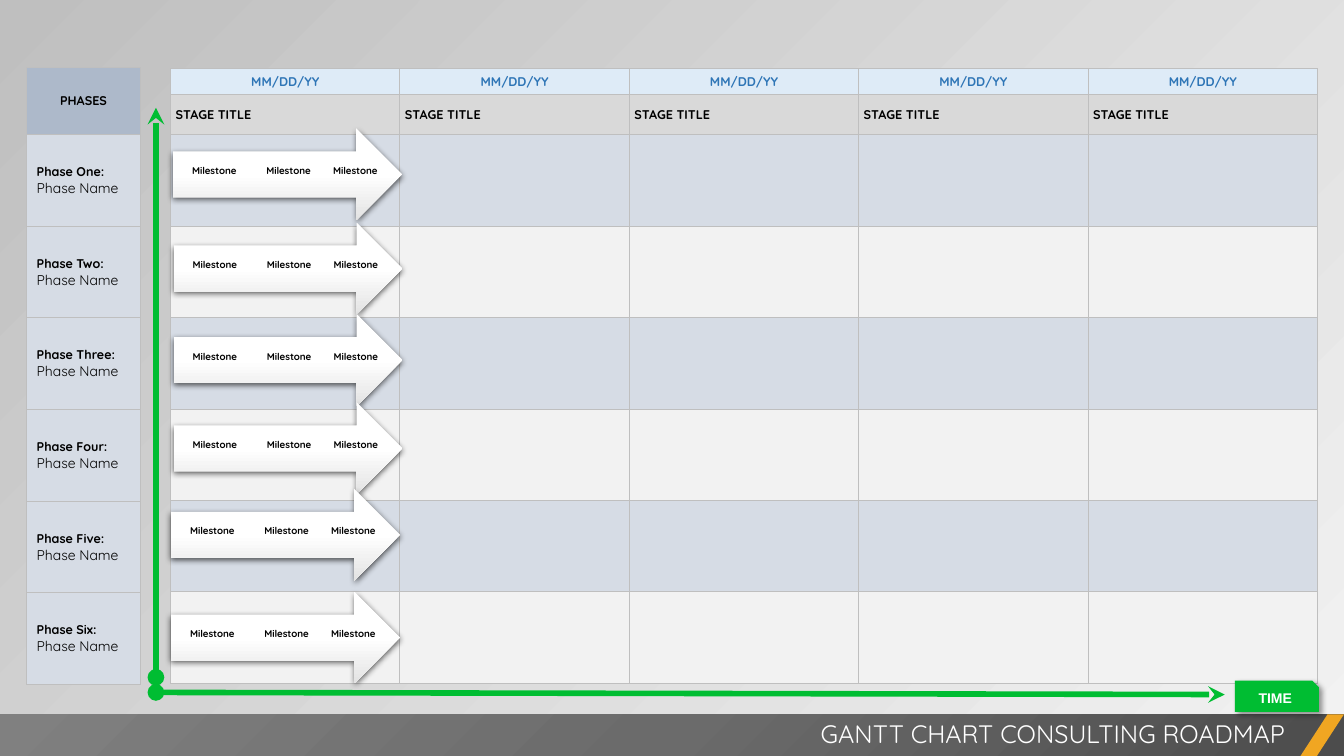
import pptx
import pptx.dml.color
import pptx.enum.shapes
import pptx.enum.text
import pptx.oxml
import pptx.oxml.ns
import pptx.util

Pt = pptx.util.Pt
Shape = pptx.enum.shapes.MSO_SHAPE
Align = pptx.enum.text.PP_ALIGN
MIDDLE = pptx.enum.text.MSO_ANCHOR.MIDDLE

GREEN = "00BD32"
STAGE_COUNT = 5
PHASES = ["One", "Two", "Three", "Four", "Five", "Six"]
ARROW_SPOTS = [(123.6, 91.7), (124, 159), (124, 224.4), (124, 287.4), (122.2, 349.2), (122.2, 422.6)]
MILESTONES = [(4.3, 50.4), (65.2, 34.6), (112.9, 34.6)]
HEADER_FONT = {"name": "Quicksand", "size": Pt(9), "bold": True}
NAME_FONT = {"name": "Quicksand", "size": Pt(10), "bold": False}
MILESTONE_FONT = {"name": "Quicksand", "size": Pt(7), "bold": True}
TIME_FONT = {"name": "Arial", "size": Pt(10), "bold": True}
TITLE_FONT = {"name": "Quicksand", "size": Pt(18), "bold": False}


def apply_format(target, values):
    """Set every attribute in values on target."""
    for name, value in values.items():
        setattr(target, name, value)


def paint(fill, colour):
    """Make a fill solid in a hex colour."""
    fill.solid()
    fill.fore_color.rgb = pptx.dml.color.RGBColor.from_string(colour)


def drawing_xml(tag, content="", attributes=""):
    """Build one DrawingML element."""
    namespace = pptx.oxml.ns.nsdecls("a")
    return pptx.oxml.parse_xml(f"<a:{tag} {namespace} {attributes}>{content}</a:{tag}>")


def paint_gradient(fill, element, stops, direction):
    """Give a fill gradient stops (position, hex, opacity) and a direction."""
    fill.gradient()
    marks = "".join(
        f'<a:gs pos="{position * 1000}"><a:srgbClr val="{colour}">'
        f'<a:alpha val="{opacity * 1000}"/></a:srgbClr></a:gs>'
        for position, colour, opacity in stops)
    gradient = element.xpath(".//a:gradFill")[0]
    gradient.getparent().replace(gradient, drawing_xml("gradFill", f"<a:gsLst>{marks}</a:gsLst>{direction}"))


def add_shadow(shape, opacity, blur, distance, angle):
    """Add a black outer shadow to a shape."""
    effects = shape.element.spPr.find(pptx.oxml.ns.qn("a:effectLst"))
    effects.append(drawing_xml(
        "outerShdw",
        f'<a:srgbClr val="000000"><a:alpha val="{opacity * 1000}"/></a:srgbClr>',
        f'blurRad="{Pt(blur)}" dist="{Pt(distance)}" dir="{angle * 60000}" algn="t" rotWithShape="0"'))


def write(frame, runs, alignment, para_format=None):
    """Write runs of (text, font, colour) in the first paragraph."""
    para = frame.paragraphs[0]
    apply_format(para, {"alignment": alignment, **(para_format or {})})
    for text, font, colour in runs:
        span = para.add_run()
        span.text = text
        apply_format(span.font, font)
        paint(span.font.fill, colour)


def add_plain_shape(shapes, kind, place, colour=None):
    """Add a preset shape with no outline or theme shadow."""
    shape = shapes.add_shape(kind, *map(Pt, place))
    shape.shadow.inherit = False
    shape.line.fill.background()
    if colour:
        paint(shape.fill, colour)
    return shape


def add_grid(slide, place, widths, heights):
    """Add a plain table with given column widths and row heights."""
    frame = slide.shapes.add_table(len(heights), len(widths), *map(Pt, place))
    table = frame.table
    apply_format(table, {"first_row": False, "horz_banding": False})
    for column, width in zip(table.columns, widths):
        column.width = Pt(width)
    for row, height in zip(table.rows, heights):
        row.height = Pt(height)
    return frame


def fill_cell(cell, colour, runs=(), alignment=Align.LEFT, margins=(3.6, 3.6, 3.6, 3.6)):
    """Colour a cell and write its text; margins are left, top, right, bottom."""
    sides = ("margin_left", "margin_top", "margin_right", "margin_bottom")
    apply_format(cell, {"vertical_anchor": MIDDLE, **dict(zip(sides, map(Pt, margins)))})
    paint(cell.fill, colour)
    if runs:
        write(cell.text_frame, runs, alignment)


def draw_borders(frame):
    """Draw thin grey borders round every cell of a table."""
    for properties in frame.element.xpath(".//a:tcPr"):
        for index, side in enumerate(("lnL", "lnR", "lnT", "lnB")):
            properties.insert(index, drawing_xml(
                side, '<a:solidFill><a:srgbClr val="BFBFBF"/></a:solidFill>', f'w="{Pt(0.75)}"'))


def add_stage_table(slide):
    """Add the dated stage grid."""
    frame = add_grid(slide, (121.8, 49, 819.3, 438.4), [163.86] * STAGE_COUNT,
                     [16.6, 28.8] + [65.3] * len(PHASES))
    for column in range(STAGE_COUNT):
        fill_cell(frame.table.cell(0, column), "DEEBF7", [("MM/DD/YY", HEADER_FONT, "2E75B6")], Align.CENTER)
        fill_cell(frame.table.cell(1, column), "D9D9D9", [("STAGE TITLE", HEADER_FONT, "000000")])
        for phase in range(len(PHASES)):
            fill_cell(frame.table.cell(phase + 2, column), ("D6DCE5", "F2F2F2")[phase % 2])
    draw_borders(frame)


def add_phase_table(slide):
    """Add the column of phase names."""
    frame = add_grid(slide, (19, 48.5, 81.3, 440.6), [81.3], [47.6] + [65.5] * len(PHASES))
    fill_cell(frame.table.cell(0, 0), "ADB9CA", [("PHASES", HEADER_FONT, "000000")], Align.CENTER, (0, 0, 0, 0))
    for row, phase in enumerate(PHASES, 1):
        runs = [(f"Phase {phase}: ", HEADER_FONT, "000000"), ("Phase Name", NAME_FONT, "000000")]
        fill_cell(frame.table.cell(row, 0), "D6DCE5", runs, margins=(7.2, 0, 3.6, 0))
    draw_borders(frame)


def add_axis(slide, start, end):
    """Add a green axis with an arrowhead at its start and a dot at its end."""
    axis = slide.shapes.add_connector(pptx.enum.shapes.MSO_CONNECTOR.STRAIGHT, *map(Pt, start + end))
    paint(axis.line.fill, GREEN)
    axis.line.width = Pt(4)
    outline = axis.line.fill and axis.element.xpath("./p:spPr/a:ln")[0]
    outline.append(drawing_xml("headEnd", attributes='type="stealth"'))
    outline.append(drawing_xml("tailEnd", attributes='type="oval"'))
    axis.element.spPr.append(drawing_xml("effectLst"))


def add_milestone_arrow(slide, left, top):
    """Add a grouped white arrow with its milestone labels."""
    group = slide.shapes.add_group_shape()
    arrow = add_plain_shape(group.shapes, Shape.RIGHT_ARROW, (left, top, 163.6, 65.6))
    stops = [(0, "FFFFFF", 100), (50, "FFFFFF", 100), (100, "E3E3E3", 100)]
    paint_gradient(arrow.fill, arrow.element, stops, '<a:lin ang="5400000" scaled="0"/>')
    add_shadow(arrow, 63, 4.5, 1.5, 90)
    for offset, width in MILESTONES:
        box = group.shapes.add_textbox(*map(Pt, (left + offset, top + 21, width, 19.4)))
        apply_format(box.text_frame, {
            "word_wrap": True, "vertical_anchor": MIDDLE, "margin_left": 0, "margin_right": 0,
            "margin_top": Pt(5.8), "margin_bottom": Pt(5.8)})
        write(box.text_frame, [("Milestone", MILESTONE_FONT, "000000")], Align.CENTER,
              {"line_spacing": 0.9, "space_after": Pt(2.5)})


def add_footer(slide):
    """Add the dark footer band, its accent and the title."""
    band = add_plain_shape(slide.shapes, Shape.RECTANGLE, (0, 510.2, 960, 30))
    paint_gradient(band.fill, band.element, [(0, "4C4C4C", 100), (50, "6B6B6B", 100), (100, "808080", 100)],
                   '<a:path path="circle"><a:fillToRect l="100000" t="100000"/></a:path>')
    accent = add_plain_shape(slide.shapes, Shape.PARALLELOGRAM, (928.8, 510.2, 31.2, 30), "F0A622")
    accent.adjustments[0] = 0.65
    title = slide.shapes.title
    apply_format(title, dict(zip(("left", "top", "width", "height"), map(Pt, (378, 509.8, 547.2, 29)))))
    apply_format(title.text_frame, {
        "word_wrap": True, "auto_size": pptx.enum.text.MSO_AUTO_SIZE.NONE,
        "vertical_anchor": pptx.enum.text.MSO_ANCHOR.TOP})
    write(title.text_frame, [("GANTT CHART CONSULTING ROADMAP", TITLE_FONT, "FFFFFF")], Align.RIGHT)
    title.element.getparent().append(title.element)


def add_time_label(slide):
    """Add the green label at the end of the time axis."""
    label = add_plain_shape(slide.shapes, Shape.SNIP_1_RECTANGLE, (882, 486.2, 60, 22.4), GREEN)
    label.adjustments[0] = 0.21
    add_shadow(label, 40, 4, 3, 45)
    label.text_frame.vertical_anchor = MIDDLE
    write(label.text_frame, [("TIME", TIME_FONT, "FFFFFF")], Align.CENTER)


def main():
    """Build and save the roadmap slide."""
    deck = pptx.Presentation()
    apply_format(deck, {"slide_width": Pt(960), "slide_height": Pt(540)})
    slide = deck.slides.add_slide(deck.slide_layouts[5])
    paint_gradient(slide.background.fill, slide.element, [(0, "F2F2F2", 40), (100, "BFBFBF", 100)],
                   '<a:lin ang="13500000" scaled="0"/>')
    add_footer(slide)
    add_stage_table(slide)
    add_axis(slide, (874.8, 496.1), (111.4, 494.6))
    add_time_label(slide)
    add_axis(slide, (111.4, 77), (111.4, 483.8))
    add_phase_table(slide)
    for left, top in ARROW_SPOTS:
        add_milestone_arrow(slide, left, top)
    deck.save("out.pptx")


if __name__ == "__main__":
    main()
